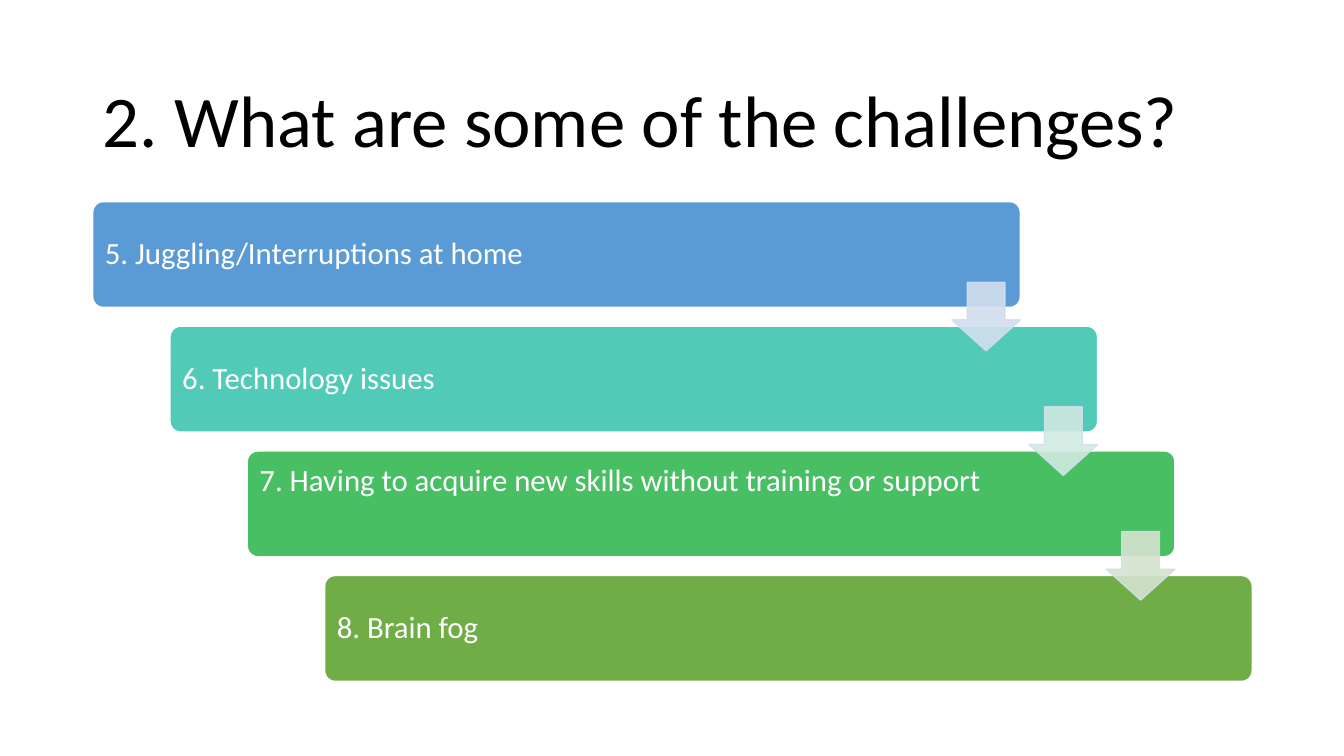
"""Build a slide with a staircase of four challenges joined by arrows."""
from lxml.etree import SubElement
from pptx import Presentation
from pptx.dml.color import RGBColor
from pptx.enum.shapes import MSO_SHAPE
from pptx.enum.text import MSO_ANCHOR, PP_ALIGN
from pptx.oxml.ns import qn
from pptx.util import Inches, Pt

TITLE = "2. What are some of the challenges?"
CHALLENGES = [
    ("5. Juggling/Interruptions at home", "5B9BD5", 0),
    ("6. Technology issues", "52CAB8", 0),
    ("7. Having to acquire new skills without training or support", "49BF64", 0.44),
    ("8. Brain fog", "70AD47", 0),
]
ARROW_FILLS = ["D2DEEF", "D0EAE1", "D5E3CF"]
ARROW_LINE = "D2DEEF"
FONT = "Calibri"

LEFT, TOP = 0.92, 2
BAR_WIDTH, BAR_HEIGHT = 9.2, 1.05
STEP_X, STEP_Y = 2.3 / 3, 3.71 / 3
ARROW_SIZE, ARROW_DROP = 0.68, 0.8


def color(hex_value):
    return RGBColor.from_string(hex_value)


def write(shape, text, size, hex_value):
    frame = shape.text_frame
    frame.word_wrap = True
    frame.vertical_anchor = MSO_ANCHOR.MIDDLE
    paragraph = frame.paragraphs[0]
    paragraph.text = text
    paragraph.alignment = PP_ALIGN.LEFT
    paragraph.line_spacing = 0.9
    paragraph.font.name = FONT
    paragraph.font.size = Pt(size)
    paragraph.font.color.rgb = color(hex_value)
    return frame


def add_block(slide, kind, box, adjustments, fill, line):
    shape = slide.shapes.add_shape(kind, *map(Inches, box))
    for index, value in enumerate(adjustments):
        shape.adjustments[index] = value
    shape.shadow.inherit = False
    shape.fill.solid()
    shape.fill.fore_color.rgb = color(fill)
    shape.line.color.rgb = color(line)
    shape.line.width = Pt(1)
    return shape


def add_bar(slide, step, text, fill, lift):
    box = (LEFT + step * STEP_X, TOP + step * STEP_Y, BAR_WIDTH, BAR_HEIGHT)
    bar = add_block(slide, MSO_SHAPE.ROUNDED_RECTANGLE, box, [0.1], fill, "FFFFFF")
    frame = write(bar, text, 22, "FFFFFF")
    frame.margin_left = frame.margin_right = frame.margin_top = Inches(0.09)
    frame.margin_bottom = Inches(0.09 + lift)


def add_arrow(slide, step, fill):
    left = LEFT + step * STEP_X + BAR_WIDTH - ARROW_SIZE
    top = TOP + step * STEP_Y + ARROW_DROP
    box = (left, top, ARROW_SIZE, ARROW_SIZE)
    arrow = add_block(slide, MSO_SHAPE.DOWN_ARROW, box, [0.45, 0.55], fill, ARROW_LINE)
    arrow.adjustments[0], arrow.adjustments[1] = 0.55, 0.45
    for tint in arrow.element.spPr.iter(qn("a:srgbClr")):
        SubElement(tint, qn("a:alpha")).set("val", "90000")


def main():
    presentation = Presentation()
    presentation.slide_width = Inches(13.33)
    presentation.slide_height = Inches(7.5)
    slide = presentation.slides.add_slide(presentation.slide_layouts[6])

    title = slide.shapes.add_textbox(*map(Inches, (LEFT, 0.61, 11.5, 1.24)))
    write(title, TITLE, 52, "000000")

    for step, (text, fill, lift) in enumerate(CHALLENGES):
        add_bar(slide, step, text, fill, lift)
    for step, fill in enumerate(ARROW_FILLS):
        add_arrow(slide, step, fill)

    presentation.save("out.pptx")


if __name__ == "__main__":
    main()
